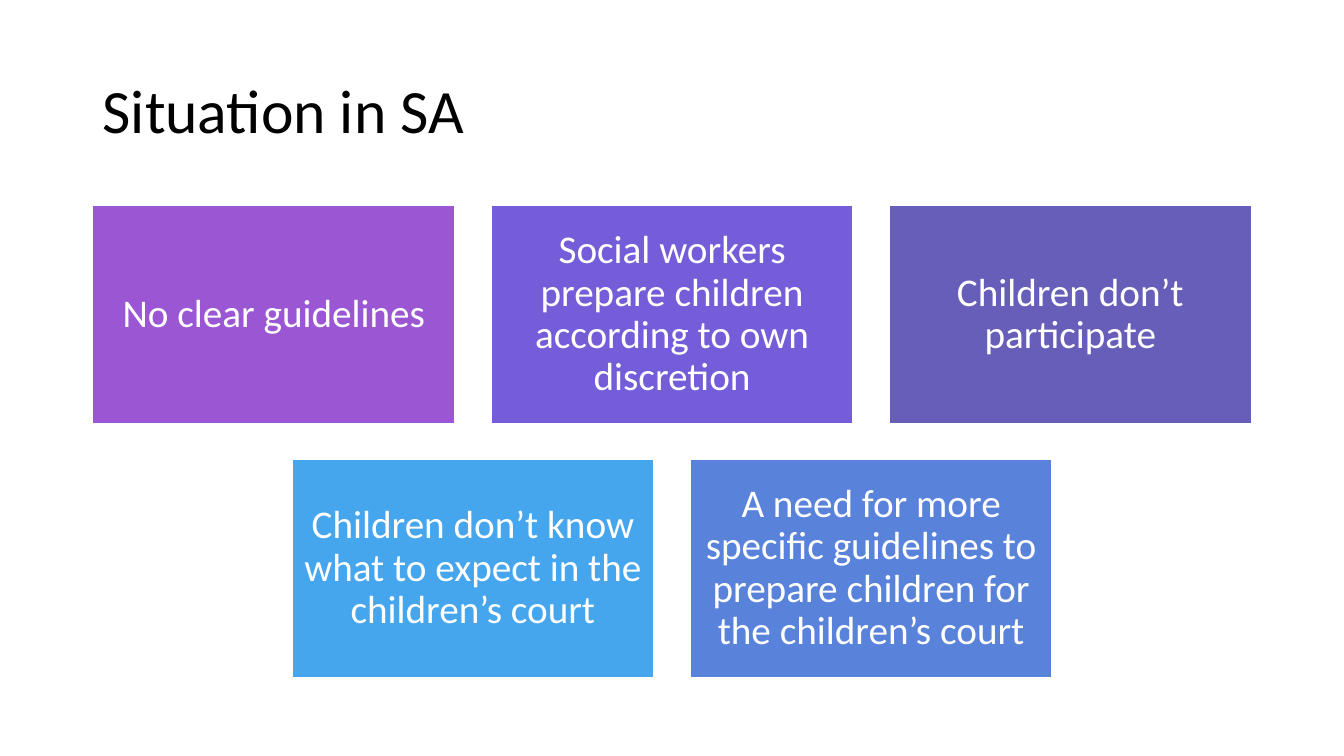
"""Builds the slide "Situation in SA" with two centred rows of coloured cards."""
from dataclasses import dataclass

import pptx
import pptx.dml.color
import pptx.enum.shapes
import pptx.enum.text
import pptx.util

Inches = pptx.util.Inches
Align = pptx.enum.text.PP_ALIGN

SLIDE_WIDTH, SLIDE_HEIGHT = 13.33, 7.5
CARD_WIDTH, CARD_HEIGHT, CARD_GAP = 3.59, 2.16, 0.36
CARDS_TOP = 2.04


@dataclass(frozen=True)
class Theme:
    """Colours and type sizes of the slide."""
    font: str = "Calibri"
    title_size: int = 44
    card_size: int = 28
    dark: str = "000000"
    light: str = "FFFFFF"
    purple: str = "9B57D3"
    violet: str = "755DD9"
    indigo: str = "665EB8"
    sky: str = "45A5ED"
    blue: str = "5982DB"


class SlideBuilder:
    """Adds styled elements to one slide."""

    def __init__(self, slide, theme):
        self.slide = slide
        self.theme = theme

    def color(self, value):
        """Return the colour object for a hex value."""
        return pptx.dml.color.RGBColor.from_string(value)

    def set_text(self, shape, text, size, color, alignment):
        """Put one vertically centred paragraph in a shape."""
        frame = shape.text_frame
        frame.word_wrap = True
        frame.vertical_anchor = pptx.enum.text.MSO_ANCHOR.MIDDLE
        paragraph = frame.paragraphs[0]
        paragraph.text = text
        paragraph.alignment = alignment
        paragraph.line_spacing = 0.9
        paragraph.font.name = self.theme.font
        paragraph.font.size = pptx.util.Pt(size)
        paragraph.font.color.rgb = self.color(color)

    def title(self, text, left, top, width, height):
        """Add the slide heading."""
        shape = self.slide.shapes.add_textbox(
            Inches(left), Inches(top), Inches(width), Inches(height))
        self.set_text(shape, text, self.theme.title_size, self.theme.dark, Align.LEFT)

    def card(self, text, fill, left, top):
        """Add one filled rectangle with centred text."""
        shape = self.slide.shapes.add_shape(
            pptx.enum.shapes.MSO_SHAPE.RECTANGLE,
            Inches(left), Inches(top), Inches(CARD_WIDTH), Inches(CARD_HEIGHT))
        shape.shadow.inherit = False
        shape.fill.solid()
        shape.fill.fore_color.rgb = self.color(fill)
        shape.line.color.rgb = self.color(self.theme.light)
        shape.line.width = pptx.util.Pt(1)
        frame = shape.text_frame
        frame.margin_left = frame.margin_right = Inches(0.11)
        frame.margin_top = frame.margin_bottom = Inches(0.11)
        self.set_text(shape, text, self.theme.card_size, self.theme.light, Align.CENTER)

    def card_row(self, cards, top):
        """Add a row of cards centred on the slide."""
        pitch = CARD_WIDTH + CARD_GAP
        left = (SLIDE_WIDTH - len(cards) * pitch + CARD_GAP) / 2
        for index, (text, fill) in enumerate(cards):
            self.card(text, fill, left + index * pitch, top)


def main():
    """Build and save the presentation."""
    presentation = pptx.Presentation()
    presentation.slide_width = Inches(SLIDE_WIDTH)
    presentation.slide_height = Inches(SLIDE_HEIGHT)
    slide = presentation.slides.add_slide(presentation.slide_layouts[6])
    theme = Theme()
    builder = SlideBuilder(slide, theme)
    builder.title("Situation in SA", 0.92, 0.4, 11.5, 1.45)
    rows = [
        [("No clear guidelines", theme.purple),
         ("Social workers prepare children according to own discretion", theme.violet),
         ("Children don’t participate", theme.indigo)],
        [("Children don’t know what to expect in the children’s court", theme.sky),
         ("A need for more specific guidelines to prepare children for "
          "the children’s court", theme.blue)],
    ]
    for index, cards in enumerate(rows):
        builder.card_row(cards, CARDS_TOP + index * (CARD_HEIGHT + CARD_GAP))
    presentation.save("out.pptx")


if __name__ == "__main__":
    main()
